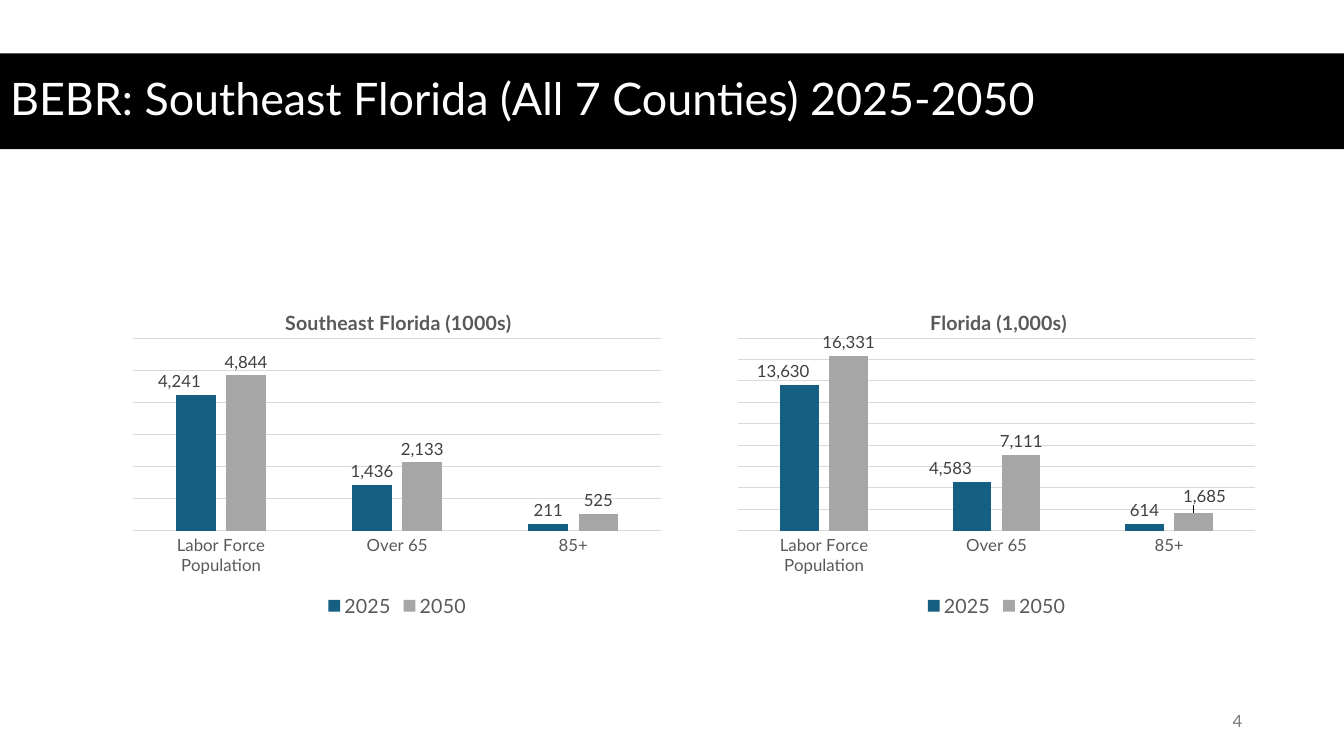
from lxml import etree
from pptx import Presentation
from pptx import util as u
from pptx.chart.data import CategoryChartData
from pptx.dml.color import RGBColor
from pptx.enum import chart as ch, text
from pptx.oxml.ns import qn

# Content
TITLE = "BEBR: Southeast Florida (All 7 Counties) 2025-2050"
PAGE = "4"
GROUPS = ["Labor Force Population", "Over 65", "85+"]
# nudges: (series, point) -> label shift as shares of the chart's size
CHARTS = [
    {"title": "Southeast Florida (1000s)", "left": 1.21, "width": 5.46,
     "title_x": 0.29, "top_value": 6000, "step": 1000,
     "values": {"2025": (4241, 1436, 211), "2050": (4844, 2133, 525)},
     "nudges": {(0, 0): (-0.03, 0)}},
    {"title": "Florida (1,000s)", "left": 7.21, "width": 5.35,
     "title_x": 0.37, "top_value": 18000, "step": 2000,
     "values": {"2025": (13630, 4583, 614), "2050": (16331, 7111, 1685)},
     "nudges": {(0, 0): (-0.03, 0), (0, 1): (-0.04, 0), (1, 2): (0.02, -0.01)}},
]
CHART_TOP, CHART_HEIGHT = 2.82, 3.35
PLOT = {"x": 0.02, "y": 0.16, "w": 0.96, "h": 0.57}
TITLE_Y = 0.06
FONT = "Lato"
COLORS = {"band": "000000", "white": "FFFFFF", "2025": "156082", "2050": "A6A6A6",
          "text": "595959", "label": "404040", "grid": "D9D9D9", "page": "797979"}


def rgb(name):
    return RGBColor.from_string(COLORS[name])


def style(font, size, color, bold=False):
    font.name, font.size, font.bold = FONT, u.Pt(size), bold
    font.color.rgb = rgb(color)


def place(shape, *box):
    shape.left, shape.top, shape.width, shape.height = map(u.Inches, box)


def manual_layout(shares, modes=(), inner=False):
    layout = etree.Element(qn("c:layout"))
    manual = etree.SubElement(layout, qn("c:manualLayout"))
    settings = {"layoutTarget": "inner"} if inner else {}
    settings.update({m: "edge" for m in modes})
    settings.update(shares)
    for tag, value in settings.items():
        etree.SubElement(manual, qn("c:" + tag)).set("val", str(value))
    return layout


def set_layout(parent, before, layout):
    for old in parent.findall(qn("c:layout")):
        parent.remove(old)
    parent.find(qn(before)).addnext(layout)


def add_bars(s, item):
    data = CategoryChartData(number_format="#,##0")
    data.categories = GROUPS
    for year, values in item["values"].items():
        data.add_series(year, values)
    box = map(u.Inches, (item["left"], CHART_TOP, item["width"], CHART_HEIGHT))
    chart = s.shapes.add_chart(ch.XL_CHART_TYPE.COLUMN_CLUSTERED, *box, data).chart
    chart.font.name, chart.font.size = FONT, u.Pt(10)

    # Title and legend
    chart.has_title = True
    r = chart.chart_title.text_frame.paragraphs[0].add_run()
    r.text = item["title"]
    style(r.font, 14, "text", bold=True)
    chart.chart_title.include_in_layout = False
    set_layout(chart.chart_title._element, "c:tx", manual_layout(
        {"x": item["title_x"], "y": TITLE_Y}, ("xMode", "yMode")))
    chart.has_legend = True
    chart.legend.position = ch.XL_LEGEND_POSITION.BOTTOM
    chart.legend.include_in_layout = False
    style(chart.legend.font, 14, "text")

    # Axes and plot area
    cat, val = chart.category_axis, chart.value_axis
    cat.major_tick_mark = ch.XL_TICK_MARK.NONE
    style(cat.tick_labels.font, 12, "text")
    val.visible = False
    val.minimum_scale, val.maximum_scale = 0, item["top_value"]
    val.major_unit = item["step"]
    for line in (cat.format.line, val.major_gridlines.format.line):
        line.color.rgb, line.width = rgb("grid"), u.Pt(0.75)
    area = chart._chartSpace.chart.plotArea
    for old in area.findall(qn("c:layout")):
        area.remove(old)
    area.insert(0, manual_layout(PLOT, ("xMode", "yMode"), inner=True))

    # Bars and their labels
    plot = chart.plots[0]
    plot.gap_width, plot.overlap, plot.vary_by_categories = 219, -27, False
    for series in plot.series:
        series.format.fill.solid()
        series.format.fill.fore_color.rgb = rgb(series.name)
        labels = series.data_labels
        labels.show_value = True
        labels.number_format, labels.number_format_is_linked = "#,##0", False
        labels.position = ch.XL_LABEL_POSITION.OUTSIDE_END
        style(labels.font, 12, "label")
    for (row, point), (dx, dy) in item["nudges"].items():
        label = plot.series[row].points[point].data_label
        style(label.font, 12, "label")
        label.position = ch.XL_LABEL_POSITION.OUTSIDE_END
        dlbls = plot.series[row].data_labels._element
        dlbl = next(d for d in dlbls.findall(qn("c:dLbl"))
                    if d.find(qn("c:idx")).get("val") == str(point))
        set_layout(dlbl, "c:idx", manual_layout({"x": dx, "y": dy}))


def main():
    prs = Presentation()
    prs.slide_width, prs.slide_height = u.Inches(13.33), u.Inches(7.5)
    s = prs.slides.add_slide(prs.slide_layouts[5])

    # Title band
    band = s.shapes.title
    place(band, 0, 0.53, 13.33, 0.95)
    band.fill.solid()
    band.fill.fore_color.rgb = rgb("band")
    tf = band.text_frame
    tf.vertical_anchor = text.MSO_ANCHOR.MIDDLE
    p = tf.paragraphs[0]
    p.alignment, p.line_spacing = text.PP_ALIGN.LEFT, 0.9
    r = p.add_run()
    r.text = TITLE
    style(r.font, 32, "white")

    # Charts
    for item in CHARTS:
        add_bars(s, item)

    # Page number
    sp = s.shapes.add_textbox(*map(u.Inches, (9.42, 6.95, 3, 0.4)))
    tf = sp.text_frame
    tf.word_wrap, tf.vertical_anchor = True, text.MSO_ANCHOR.MIDDLE
    p = tf.paragraphs[0]
    p.alignment = text.PP_ALIGN.RIGHT
    r = p.add_run()
    r.text = PAGE
    style(r.font, 12, "page")

    prs.save("out.pptx")


if __name__ == "__main__":
    main()
